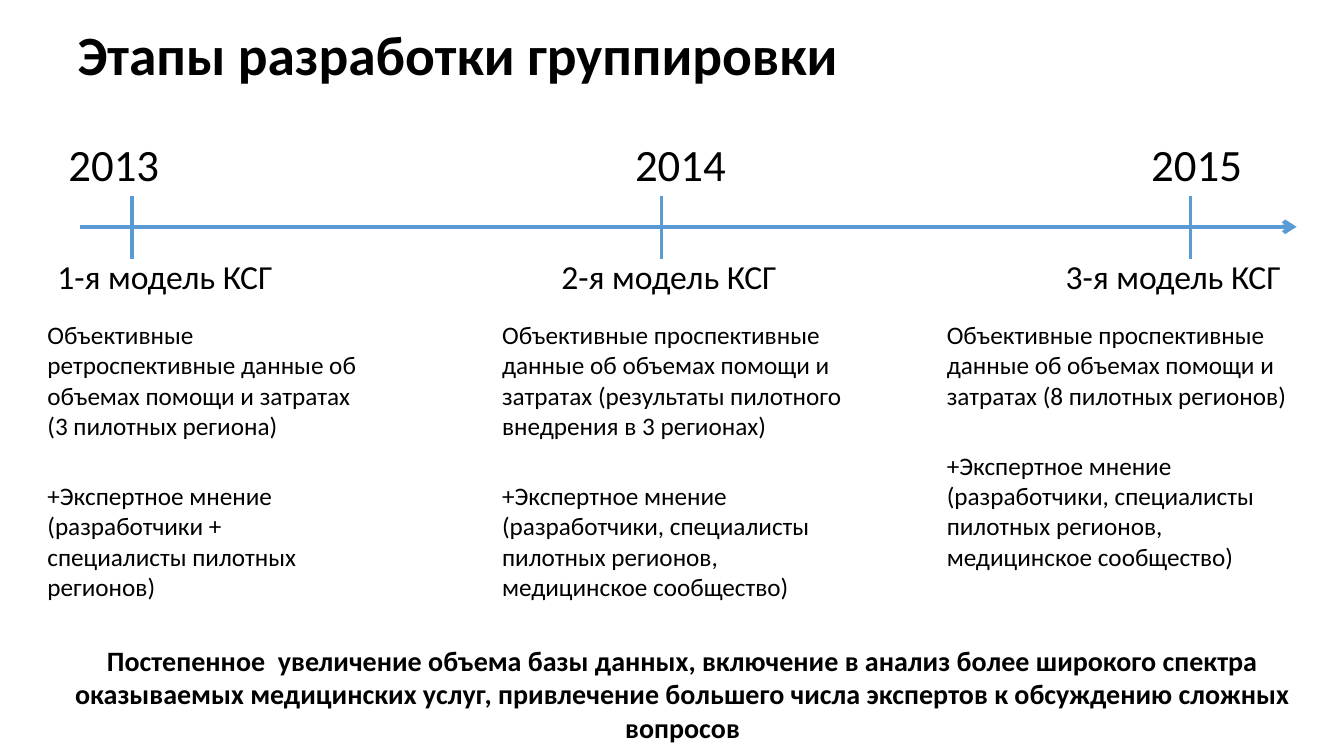
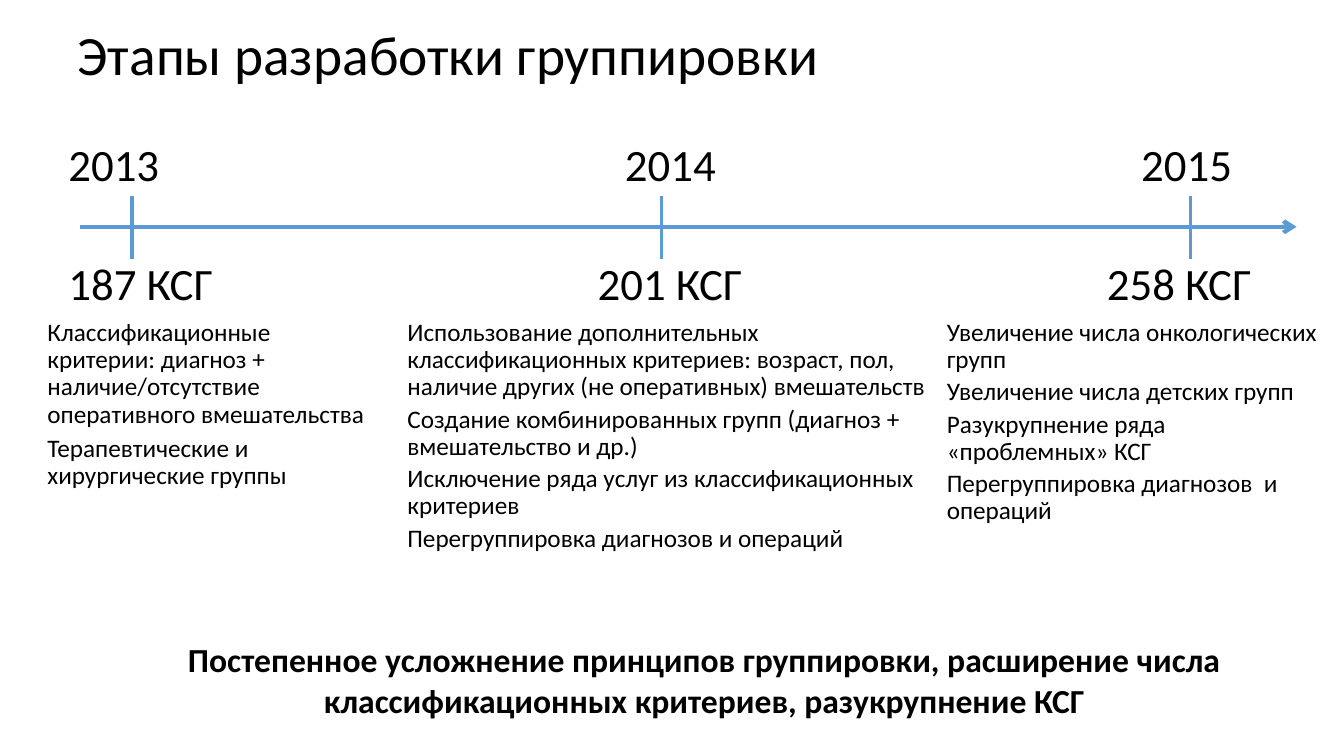
from lxml.etree import SubElement
from pptx import Presentation
from pptx.dml.color import RGBColor
from pptx.enum.shapes import MSO_CONNECTOR
from pptx.enum.text import MSO_ANCHOR, MSO_AUTO_SIZE, PP_ALIGN
from pptx.oxml.ns import qn
from pptx.util import Inches, Pt


def paint(code):
    return RGBColor.from_string(code)


def apply(target, values):
    for name, value in values.items():
        setattr(target, name, value)


class Deck:
    ink = "000000"
    blue = "5B9BD5"
    face = "Calibri"
    ticks = [1.31 + 5.25 * step for step in range(3)]

    def __init__(self):
        self.show = Presentation()
        apply(self.show, {"slide_width": Inches(13.33), "slide_height": Inches(7.5)})
        self.slide = None

    def page(self):
        layout = self.show.slide_layouts.get_by_name("Comparison")
        self.slide = self.show.slides.add_slide(layout)

    def fill(self, shape, box, lines, size, bold=False, align=PP_ALIGN.LEFT,
             anchor=MSO_ANCHOR.TOP, pitch=1.0, gap=0):
        sides = ("left", "top", "width", "height")
        apply(shape, dict(zip(sides, map(Inches, box))))
        frame = shape.text_frame
        frame.text = "\n".join(lines)
        apply(frame, {"word_wrap": True, "auto_size": MSO_AUTO_SIZE.NONE,
                      "vertical_anchor": anchor})
        for order, para in enumerate(frame.paragraphs):
            apply(para, {"alignment": align, "line_spacing": pitch,
                         "space_before": Pt(gap if order else 0)})
            apply(para.font, {"name": self.face, "size": Pt(size), "bold": bold})
            para.font.color.rgb = paint(self.ink)
            props = para._p.get_or_add_pPr()
            props.set("marL", "0")
            props.set("indent", "0")
            props.insert_element_before(
                props.makeelement(qn("a:buNone"), {}), "a:tabLst", "a:defRPr", "a:extLst")

    def title(self, text, bold):
        self.fill(self.slide.shapes.title, (0.67, 0.3, 12, 0.54), [text], 39.6,
                  bold=bold, anchor=MSO_ANCHOR.MIDDLE, pitch=0.9)

    def body(self, slot, box, lines, size, **style):
        self.fill(self.slide.placeholders[slot], box, lines, size, **style)

    def label(self, box, text, size):
        shape = self.slide.shapes.add_textbox(*map(Inches, box))
        self.fill(shape, box, [text], size)

    def line(self, start, end, width, arrow=False):
        link = self.slide.shapes.add_connector(
            MSO_CONNECTOR.STRAIGHT, *map(Inches, start + end))
        link.line.color.rgb = paint(self.blue)
        link.line.width = Pt(width)
        if arrow:
            SubElement(link.line._ln, qn("a:tailEnd"), type="arrow")
        SubElement(link._element.spPr, qn("a:effectLst"))

    def axis(self):
        self.line((0.79, 2.25), (12.86, 2.25), 3, arrow=True)
        for spot in self.ticks:
            self.line((spot, 1.94), (spot, 2.57), 2.25)

    def row(self, lefts, top, width, texts, size):
        for left, text in zip(lefts, texts):
            self.label((left, top, width, 0.47), text, size)


PAGES = [
    {
        "bold": True,
        "years": (0.58, 6.2, 11.32),
        "marks": ((0.47, 5.47, 10.47), 24,
                  ("1-я модель КСГ", "2-я модель КСГ", "3-я модель КСГ")),
        "pitch": 1.0,
        "lists": [
            ((0.37, 3.12, 3.36, 3), 28.5, [
                "Объективные ретроспективные данные об объемах помощи и затратах "
                "(3 пилотных региона)",
                "+Экспертное мнение (разработчики + специалисты пилотных регионов)"]),
            ((4.88, 3.12, 3.78, 3), 28.5, [
                "Объективные проспективные данные об объемах помощи и затратах "
                "(результаты пилотного внедрения в 3 регионах)",
                "+Экспертное мнение (разработчики, специалисты пилотных регионов, "
                "медицинское сообщество)"]),
            ((9.29, 3.12, 3.78, 3), 28.5, [
                "Объективные проспективные данные об объемах помощи и затратах "
                "(8 пилотных регионов)",
                "+Экспертное мнение (разработчики, специалисты пилотных регионов, "
                "медицинское сообщество)"]),
        ],
        "sum": ((0.47, 6.33, 12.6, 1.11), 20,
                "Постепенное  увеличение объема базы данных, включение в анализ более "
                "широкого спектра оказываемых медицинских услуг, привлечение большего "
                "числа экспертов к обсуждению сложных вопросов"),
    },
    {
        "bold": False,
        "years": (0.58, 6.1, 11.22),
        "marks": ((0.58, 5.83, 10.88), 32, ("187 КСГ", "201 КСГ", "258 КСГ")),
        "pitch": 0.9,
        "lists": [
            ((0.37, 3.12, 3.36, 3.42), 5, [
                "Классификационные критерии: диагноз + наличие/отсутствие "
                "оперативного вмешательства",
                "Терапевтические и хирургические группы"]),
            ((3.94, 3.12, 5.35, 2.78), 3.6, [
                "Использование дополнительных классификационных критериев: возраст, "
                "пол, наличие других (не оперативных) вмешательств",
                "Создание комбинированных групп (диагноз + вмешательство и др.)",
                "Исключение ряда услуг из классификационных критериев",
                "Перегруппировка диагнозов и операций"]),
            ((9.29, 3.12, 3.88, 2.44), 3.6, [
                "Увеличение числа онкологических групп",
                "Увеличение числа детских групп",
                "Разукрупнение ряда «проблемных» КСГ",
                "Перегруппировка диагнозов  и операций"]),
        ],
        "sum": ((0.79, 6.29, 12.39, 0.91), 24,
                "Постепенное усложнение принципов группировки, расширение числа "
                "классификационных критериев, разукрупнение КСГ"),
    },
]


def main():
    deck = Deck()
    for page in PAGES:
        deck.page()
        deck.title("Этапы разработки группировки", page["bold"])
        deck.axis()
        deck.row(page["years"], 1.31, 1.3, ("2013", "2014", "2015"), 32)
        lefts, size, texts = page["marks"]
        deck.row(lefts, 2.49, 2.4, texts, size)
        for slot, (box, gap, lines) in enumerate(page["lists"], 1):
            deck.body(slot, box, lines, 18, pitch=page["pitch"], gap=gap)
        box, size, text = page["sum"]
        deck.body(4, box, [text], size, bold=True, align=PP_ALIGN.CENTER)
    deck.show.save("out.pptx")


if __name__ == "__main__":
    main()
